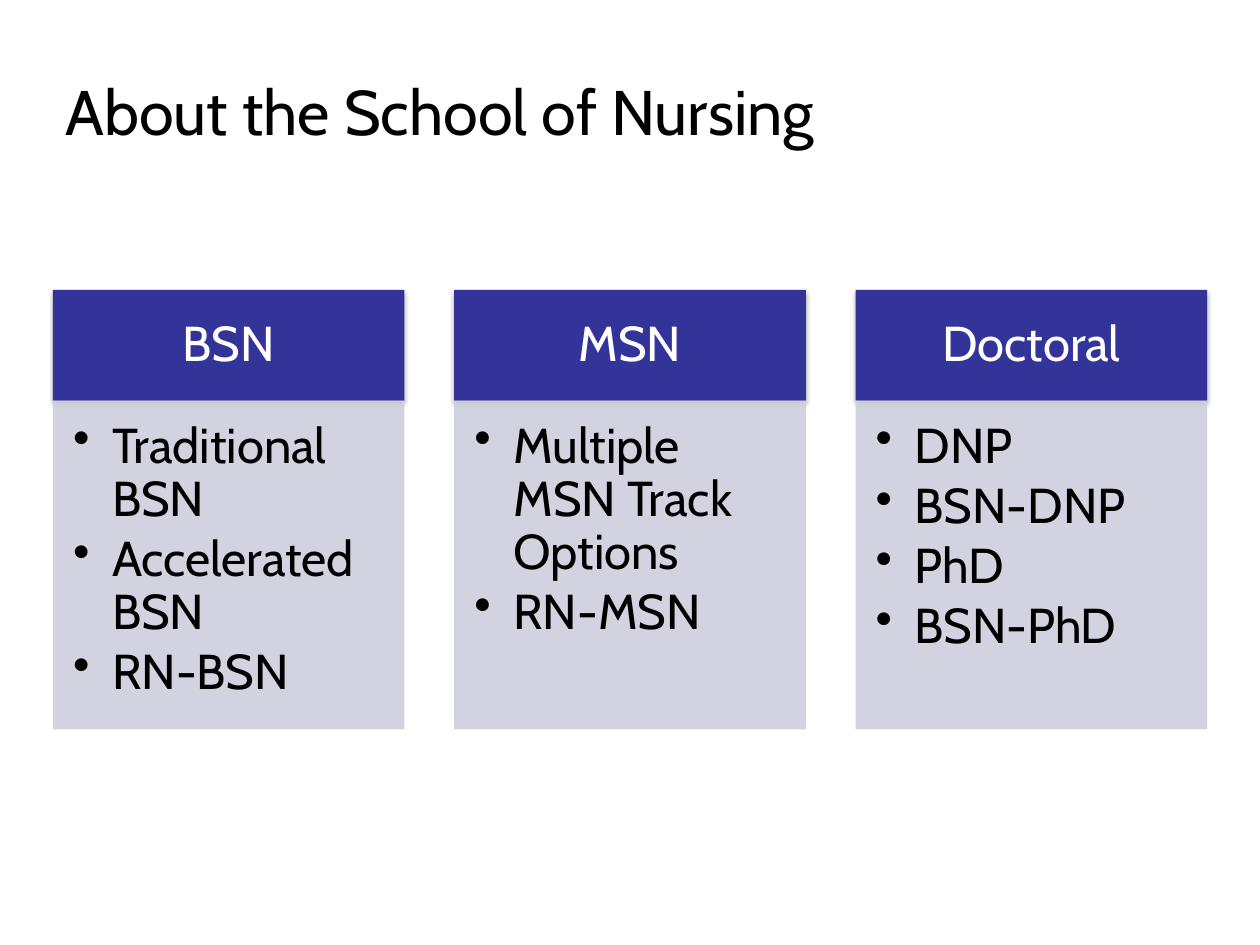
from dataclasses import dataclass

import pptx
import pptx.dml.color
import pptx.enum.shapes
import pptx.enum.text
import pptx.oxml.ns
import pptx.shapes.autoshape
import pptx.slide
import pptx.text.text
import pptx.util
from lxml import etree
from pptx.dml.color import RGBColor
from pptx.enum.text import MSO_ANCHOR, PP_ALIGN
from pptx.util import Inches, Pt

INDIGO = RGBColor(0x33, 0x33, 0x99)
LAVENDER = RGBColor(0xCE, 0xCE, 0xDE)
BLACK = RGBColor(0x00, 0x00, 0x00)
WHITE = RGBColor(0xFF, 0xFF, 0xFF)
FONT_NAME = "Cabin"

MARGIN = 0.42
CONTENT_WIDTH = 9.16
COLUMN_WIDTH = 2.79
HEADER_TOP = 2.3
HEADER_HEIGHT = 0.88
LIST_HEIGHT = 2.61
BULLET_INDENT = 0.31


@dataclass(frozen=True)
class Program:
    name: str
    options: tuple[str, ...]


PROGRAMS = (
    Program("BSN", ("Traditional BSN", "Accelerated BSN", "RN-BSN")),
    Program("MSN", ("Multiple MSN Track Options", "RN-MSN")),
    Program("Doctoral", ("DNP", "BSN-DNP", "PhD", "BSN-PhD")),
)


def add_element(parent: etree.ElementBase, tag: str, **attributes: str) -> etree.ElementBase:
    return etree.SubElement(parent, pptx.oxml.ns.qn(tag), **attributes)


def format_paragraph(
    paragraph: pptx.text.text._Paragraph, size: float, color: RGBColor, alignment: PP_ALIGN
) -> None:
    paragraph.alignment = alignment
    for run in paragraph.runs:
        run.font.name = FONT_NAME
        run.font.size = Pt(size)
        run.font.color.rgb = color


def add_panel(
    slide: pptx.slide.Slide, left: float, top: float, height: float, color: RGBColor,
    margins: tuple[float, float, float, float], anchor: MSO_ANCHOR, text: str,
) -> pptx.shapes.autoshape.Shape:
    shape = slide.shapes.add_shape(
        pptx.enum.shapes.MSO_SHAPE.RECTANGLE,
        Inches(left), Inches(top), Inches(COLUMN_WIDTH), Inches(height),
    )
    shape.shadow.inherit = False
    shape.fill.solid()
    shape.fill.fore_color.rgb = color
    shape.line.fill.background()
    frame = shape.text_frame
    frame.word_wrap = True
    frame.vertical_anchor = anchor
    frame.margin_left, frame.margin_top, frame.margin_right, frame.margin_bottom = map(
        Inches, margins
    )
    frame.text = text
    for paragraph in frame.paragraphs:
        paragraph.line_spacing = 0.9
    return shape


def add_header(slide: pptx.slide.Slide, left: float, name: str) -> None:
    shape = add_panel(
        slide, left, HEADER_TOP, HEADER_HEIGHT, INDIGO,
        (0.22, 0.12, 0.22, 0.12), MSO_ANCHOR.MIDDLE, name,
    )
    effects = shape.element.spPr.find(pptx.oxml.ns.qn("a:effectLst"))
    shadow = add_element(
        effects, "a:outerShdw", blurRad=str(Pt(3.1)), dist=str(Pt(1.8)),
        dir="5400000", rotWithShape="0",
    )
    shadow_color = add_element(shadow, "a:srgbClr", val=str(BLACK))
    add_element(shadow_color, "a:alpha", val="35000")
    format_paragraph(shape.text_frame.paragraphs[0], 28, WHITE, PP_ALIGN.CENTER)


def add_option_list(slide: pptx.slide.Slide, left: float, options: tuple[str, ...]) -> None:
    shape = add_panel(
        slide, left, HEADER_TOP + HEADER_HEIGHT, LIST_HEIGHT, LAVENDER,
        (0.16, 0.16, 0.22, 0.24), MSO_ANCHOR.TOP, "\n".join(options),
    )
    fill_color = shape.element.spPr.find(".//" + pptx.oxml.ns.qn("a:srgbClr"))
    add_element(fill_color, "a:alpha", val="90000")
    for paragraph in shape.text_frame.paragraphs:
        paragraph.level = 1
        paragraph.space_after = Pt(4.2)
        properties = paragraph._p.get_or_add_pPr()
        properties.set("marL", str(Inches(BULLET_INDENT)))
        properties.set("indent", str(Inches(-BULLET_INDENT)))
        add_element(properties, "a:buChar", char="•")
        format_paragraph(paragraph, 28, BLACK, PP_ALIGN.LEFT)


def add_title(slide: pptx.slide.Slide, text: str) -> None:
    title = slide.shapes.title
    title.left, title.top = Inches(MARGIN), Inches(0.25)
    title.width, title.height = Inches(9.17), Inches(1.25)
    title.text_frame.text = text
    title.text_frame.vertical_anchor = MSO_ANCHOR.MIDDLE
    format_paragraph(title.text_frame.paragraphs[0], 36, BLACK, PP_ALIGN.LEFT)


def main() -> None:
    presentation = pptx.Presentation()
    presentation.slide_width = Inches(10)
    presentation.slide_height = Inches(7.5)
    slide = presentation.slides.add_slide(presentation.slide_layouts.get_by_name("Title Only"))
    add_title(slide, "About the School of Nursing")
    column_step = (CONTENT_WIDTH - COLUMN_WIDTH) / (len(PROGRAMS) - 1)
    for index, program in enumerate(PROGRAMS):
        left = MARGIN + index * column_step
        add_header(slide, left, program.name)
        add_option_list(slide, left, program.options)
    presentation.save("out.pptx")


if __name__ == "__main__":
    main()
